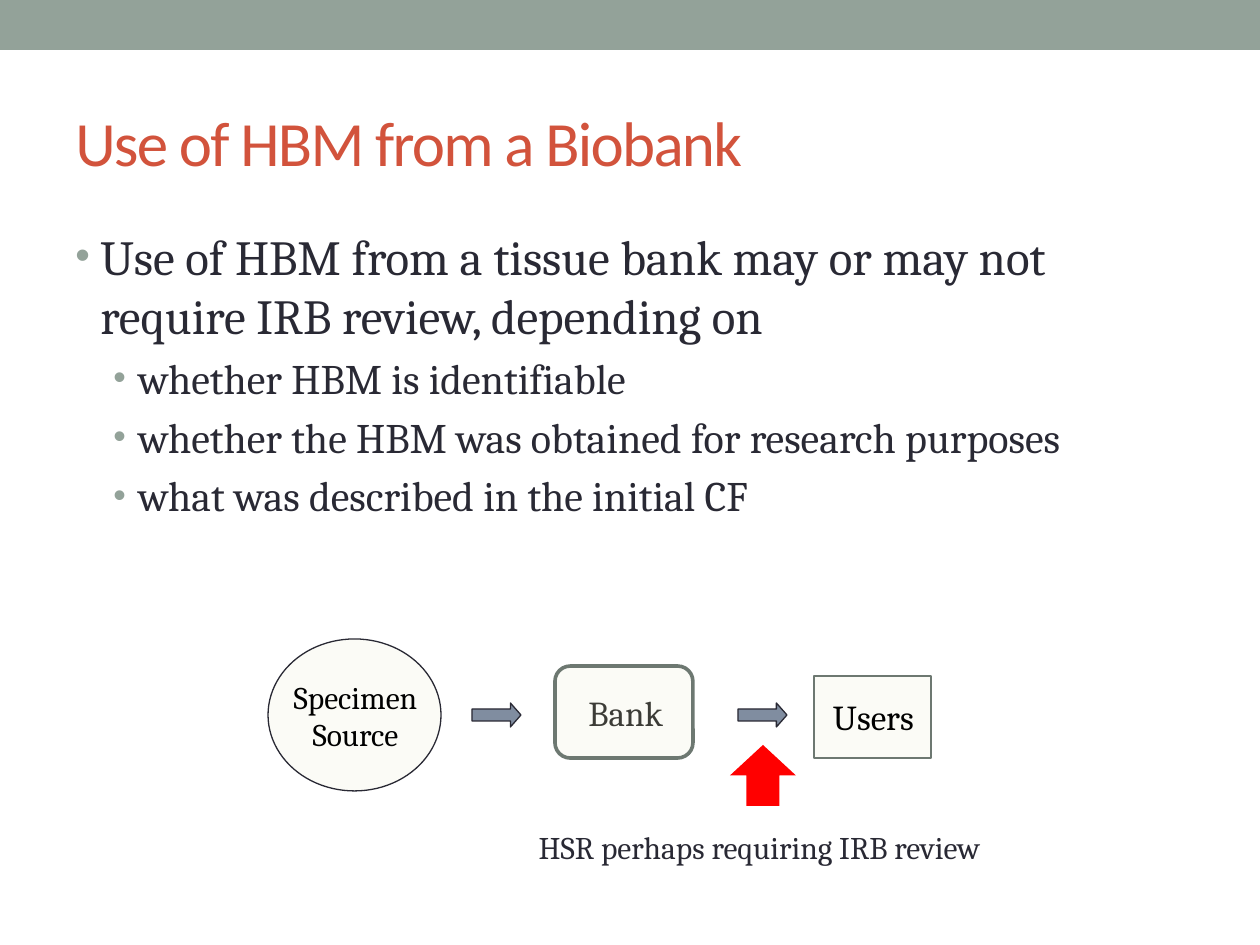
from lxml.etree import SubElement
from pptx import Presentation
from pptx.dml.color import RGBColor
from pptx.enum.shapes import MSO_SHAPE as Shape
from pptx.enum.text import MSO_ANCHOR as Anchor, MSO_AUTO_SIZE as AutoSize, PP_ALIGN as Align
from pptx.oxml.ns import qn
from pptx.util import Emu, Pt

# Colours
SAGE = RGBColor(0x93, 0xA2, 0x99)
RUST = RGBColor(0xD2, 0x53, 0x3C)
INK = RGBColor(0x29, 0x29, 0x34)
BLACK = RGBColor(0, 0, 0)
CREAM = RGBColor(0xF3, 0xF2, 0xDC)
GREY = RGBColor(0x6D, 0x78, 0x71)
SLATE = RGBColor(0x80, 0x8D, 0xA0)
RED = RGBColor(0xFF, 0, 0)

# Content: boxes are left, top, width, height in px
WIDTH, HEIGHT, PX_PER_INCH = 1260, 945, 126
TITLE = "Use of HBM from a Biobank"
BULLETS = [
    (0, "Use of HBM from a tissue bank may or may not require IRB review, depending on"),
    (1, "whether HBM is identifiable"),
    (1, "whether the HBM was obtained for research purposes"),
    (1, "what was described in the initial CF"),
]
LEVELS = [dict(size=28, indent=25), dict(size=24, indent=63)]
HANGING = 25
FLOW_ARROW_LEFTS = [472, 738]
CAPTION = "HSR perhaps requiring IRB review"


def px(value):
    return Emu(round(value * 914400 / PX_PER_INCH))


def add_shape(slide, kind, box, fill, line=None, weight=0.75, opacity=None):
    shape = slide.shapes.add_shape(kind, *map(px, box))
    shape.shadow.inherit = False
    shape.fill.solid()
    shape.fill.fore_color.rgb = fill
    if opacity is not None:
        color = shape.fill._xPr.find(".//" + qn("a:srgbClr"))
        SubElement(color, qn("a:alpha"), val=str(opacity * 1000))
    if line is None:
        shape.line.fill.background()
    else:
        shape.line.color.rgb = line
        shape.line.width = Pt(weight)
    return shape


def add_frame(slide, box, anchor=Anchor.TOP, wrap=True, grow=False):
    frame = slide.shapes.add_textbox(*map(px, box)).text_frame
    frame.word_wrap = wrap
    frame.vertical_anchor = anchor
    frame.auto_size = AutoSize.SHAPE_TO_FIT_TEXT if grow else AutoSize.NONE
    return frame


def write(paragraph, text, size, color=BLACK, font="Cambria", align=Align.LEFT,
          before=0, tracking=0):
    paragraph.alignment = align
    paragraph.space_before = Pt(before)
    run = paragraph.add_run()
    run.text = text
    run.font.size = Pt(size)
    run.font.name = font
    run.font.color.rgb = color
    if tracking:
        run.font._element.set("spc", str(tracking * 100))


def add_bullet(paragraph, indent):
    properties = paragraph._p.get_or_add_pPr()
    properties.set("marL", str(px(indent)))
    properties.set("indent", str(-px(HANGING)))
    color = SubElement(properties, qn("a:buClr"))
    SubElement(color, qn("a:srgbClr"), val=str(SAGE))
    SubElement(properties, qn("a:buSzPct"), val="85000")
    SubElement(properties, qn("a:buFont"), typeface="Arial")
    SubElement(properties, qn("a:buChar"), char="•")


def add_label(slide, box, text, size, color=BLACK, align=Align.CENTER,
              anchor=Anchor.MIDDLE, wrap=True):
    frame = add_frame(slide, box, anchor, wrap, grow=True)
    write(frame.paragraphs[0], text, size, color, align=align)


def main():
    presentation = Presentation()
    presentation.slide_width, presentation.slide_height = px(WIDTH), px(HEIGHT)
    slide = presentation.slides.add_slide(presentation.slide_layouts[6])

    # Top band and title
    add_shape(slide, Shape.RECTANGLE, (0, 0, WIDTH, 50), SAGE)
    frame = add_frame(slide, (63, 73, 1134, 136), Anchor.MIDDLE)
    write(frame.paragraphs[0], TITLE, 36, RUST, "Calibri", tracking=-1)

    # Bullet list, with a fifth of the text size above each item
    frame = add_frame(slide, (63, 220, 1134, 672))
    for number, (level, text) in enumerate(BULLETS):
        paragraph = frame.add_paragraph() if number else frame.paragraphs[0]
        paragraph.level = level
        size = LEVELS[level]["size"]
        write(paragraph, text, size, INK, before=size * 0.2)
        add_bullet(paragraph, LEVELS[level]["indent"])

    # Flow: source, bank, users
    add_shape(slide, Shape.RECTANGLE, (814, 676, 117, 82), CREAM, GREY, opacity=25)
    add_shape(slide, Shape.OVAL, (268, 639, 173, 152), CREAM, INK, opacity=25)
    add_label(slide, (262, 671, 187, 89), "Specimen Source", 18)
    for left in FLOW_ARROW_LEFTS:
        arrow = add_shape(slide, Shape.RIGHT_ARROW, (left, 703, 49, 24), SLATE, INK)
        arrow.adjustments[1] = 0.44
    add_label(slide, (576, 685, 103, 55), "Bank", 20, align=Align.LEFT, wrap=False)
    add_label(slide, (780, 689, 187, 55), "Users", 20)
    # The translucent bank box lies over its label
    add_shape(slide, Shape.ROUNDED_RECTANGLE, (555, 666, 138, 92), CREAM, GREY,
              weight=2.08, opacity=25)

    # Review marker and caption
    add_shape(slide, Shape.UP_ARROW, (730, 745, 66, 61), RED)
    add_label(slide, (445, 822, 629, 50), CAPTION, 18, INK, anchor=Anchor.TOP)

    presentation.save("out.pptx")


if __name__ == "__main__":
    main()
